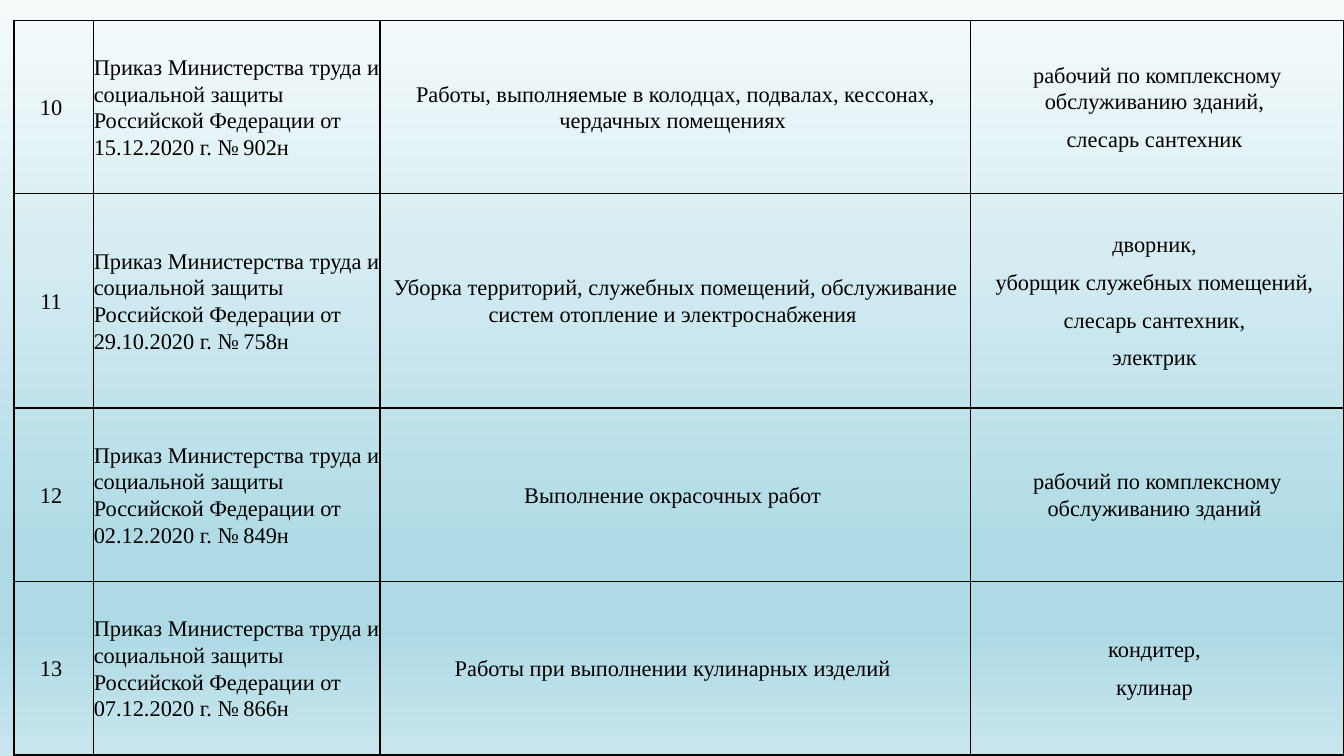
from lxml.etree import SubElement
from pptx import Presentation
from pptx.dml.color import RGBColor
from pptx.enum.text import MSO_ANCHOR, PP_ALIGN
from pptx.oxml.ns import qn
from pptx.util import Pt

NBSP, NARROW_NBSP = chr(160), chr(8239)
ORDER = "Приказ Министерства труда и социальной защиты Российской Федерации от {} г. №" + NARROW_NBSP + "{}"
WORKS = [
    ("10", ("15.12.2020", "902н"),
     "Работы, выполняемые в колодцах, подвалах, кессонах, чердачных помещениях",
     ["рабочий по комплексному обслуживанию зданий,", "слесарь сантехник"]),
    ("11", ("29.10.2020", "758н"),
     "Уборка территорий, служебных помещений, обслуживание систем отопление и электроснабжения",
     ["дворник,", "уборщик служебных помещений,", "слесарь сантехник,", "электрик"]),
    ("12", ("02.12.2020", "849н"),
     "Выполнение окрасочных работ",
     ["рабочий по комплексному обслуживанию зданий"]),
    ("13", ("07.12.2020", "866н"),
     "Работы при выполнении кулинарных изделий",
     ["кондитер,", "кулинар"]),
]
COLUMN_WIDTHS = [57, 204.5, 422, 266.4]
ROW_HEIGHTS = [124, 153, 124, 124]
ALIGNMENTS = [PP_ALIGN.CENTER, PP_ALIGN.LEFT, PP_ALIGN.CENTER, PP_ALIGN.CENTER]
SKY = [(0, "F6FBFC"), (74, "AEDAE5"), (83, "AEDAE5"), (100, "C9E6EE")]
INK = "000000"
CELL_FORMAT = dict(margin_left=0, margin_right=0, margin_top=0, margin_bottom=0,
                   vertical_anchor=MSO_ANCHOR.MIDDLE)
PARAGRAPH_FORMAT = dict(line_spacing=1.07, space_after=Pt(8))
FONT_FORMAT = dict(name="Times New Roman", size=Pt(16), bold=False)
TABLE_FORMAT = dict(first_row=False, horz_banding=False)


def color(value):
    return RGBColor.from_string(value)


def apply(target, values):
    for name, value in values.items():
        setattr(target, name, value)


def paint_sky(slide):
    slide.background.fill.gradient()
    gradient = slide.element.find(".//" + qn("a:gradFill"))
    stops = gradient.find(qn("a:gsLst"))
    for stop in list(stops):
        stops.remove(stop)
    for position, value in SKY:
        stop = SubElement(stops, qn("a:gs"), pos=str(position * 1000))
        SubElement(stop, qn("a:srgbClr"), val=value)
    gradient.find(qn("a:lin")).set("ang", "5400000")


def add_borders(cell):
    properties = cell._tc.get_or_add_tcPr()
    for index, side in enumerate(("a:lnL", "a:lnR", "a:lnT", "a:lnB")):
        border = SubElement(properties, qn(side), w=str(Pt(1)))
        SubElement(SubElement(border, qn("a:solidFill")), qn("a:srgbClr"), val=INK)
        properties.insert(index, border)


def fill_cell(cell, lines, alignment):
    apply(cell, CELL_FORMAT)
    cell.fill.background()
    add_borders(cell)
    cell.text = "\n".join(line + NBSP for line in lines)
    for paragraph in cell.text_frame.paragraphs:
        apply(paragraph, PARAGRAPH_FORMAT)
        paragraph.alignment = alignment
        for run in paragraph.runs:
            apply(run.font, FONT_FORMAT)
            run.font.color.rgb = color(INK)


def main():
    deck = Presentation()
    deck.slide_width, deck.slide_height = Pt(960), Pt(540)
    slide = deck.slides.add_slide(deck.slide_layouts[6])
    paint_sky(slide)
    works = slide.shapes.add_table(
        len(WORKS), len(COLUMN_WIDTHS), Pt(10), Pt(14.4),
        Pt(sum(COLUMN_WIDTHS)), Pt(sum(ROW_HEIGHTS))).table
    apply(works, TABLE_FORMAT)
    for column, width in zip(works.columns, COLUMN_WIDTHS):
        column.width = Pt(width)
    for row, height, (number, order, work, jobs) in zip(works.rows, ROW_HEIGHTS, WORKS):
        row.height = Pt(height)
        contents = [[number], [ORDER.format(*order)], [work], jobs]
        for cell, lines, alignment in zip(row.cells, contents, ALIGNMENTS):
            fill_cell(cell, lines, alignment)
    deck.save("out.pptx")


if __name__ == "__main__":
    main()
